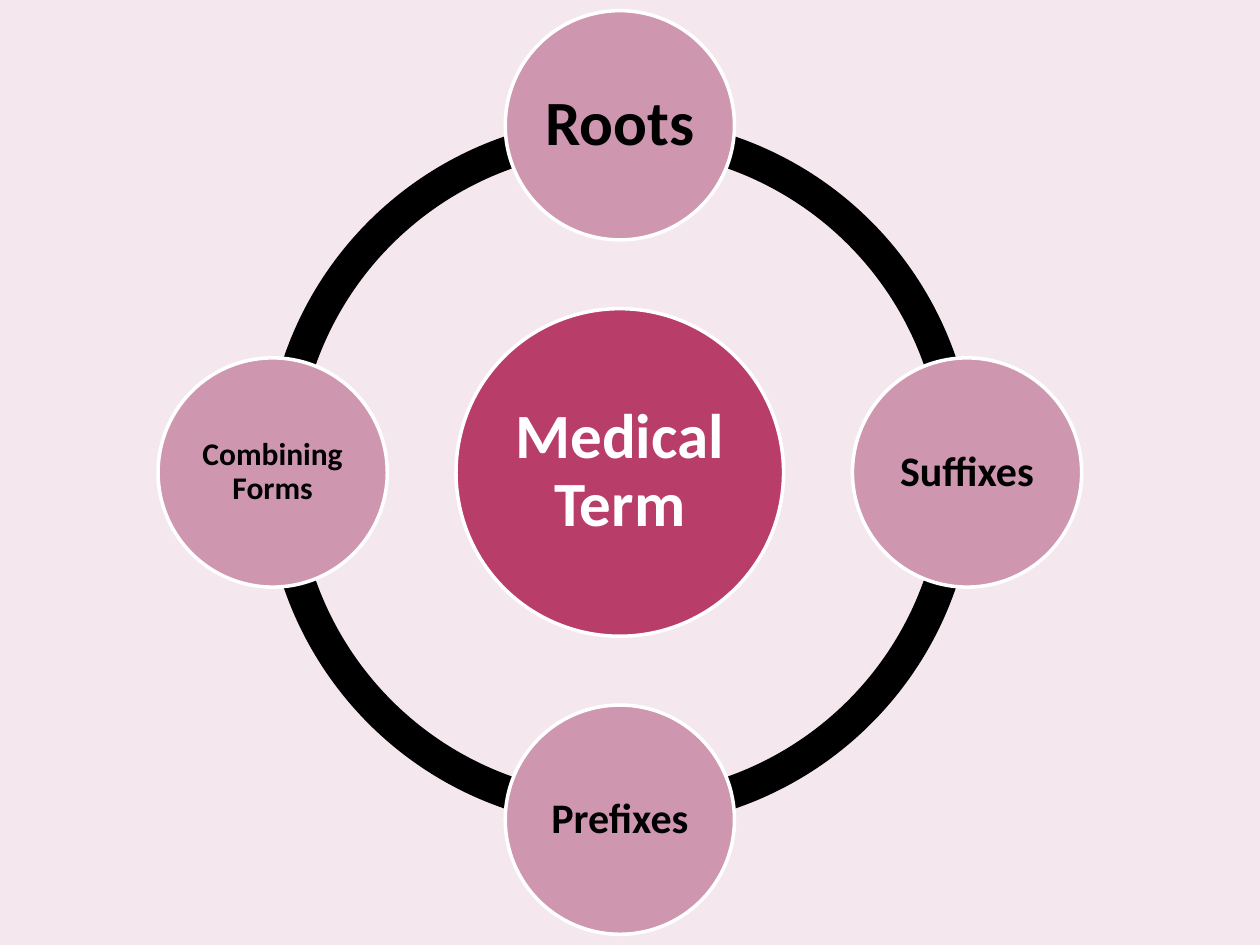
from math import cos, radians, sin

from pptx import Presentation
from pptx.dml.color import RGBColor
from pptx.enum.shapes import MSO_SHAPE
from pptx.enum.text import MSO_ANCHOR, PP_ALIGN
from pptx.util import Pt


def paint(colour_format, colour):
    colour_format.solid()
    colour_format.fore_color.rgb = RGBColor.from_string(colour)


def write(holder, text, size, colour, inset):
    frame = holder.text_frame
    frame.word_wrap = True
    frame.vertical_anchor = MSO_ANCHOR.MIDDLE
    frame.margin_left = frame.margin_right = Pt(inset)
    frame.margin_top = frame.margin_bottom = Pt(inset)
    paragraph = frame.paragraphs[0]
    paragraph.text = text
    paragraph.alignment = PP_ALIGN.CENTER
    paragraph.line_spacing = 0.9
    paragraph.font.name = "Calibri"
    paragraph.font.size = Pt(size)
    paragraph.font.bold = True
    paint(paragraph.font.fill, colour)


prs = Presentation()
prs.slide_width, prs.slide_height = Pt(720), Pt(540)
slide = prs.slides.add_slide(prs.slide_layouts[6])
paint(slide.background.fill, "F4E7ED")

center_x, center_y = 354.2, 270
ring_size, orbit = 406, 198.4
hub_size, part_size = 187.2, 131

for start, end in [(108, 162), (54, 108), (0, 54), (162, 0)]:
    arc = slide.shapes.add_shape(
        MSO_SHAPE.BLOCK_ARC,
        Pt(center_x - ring_size / 2), Pt(center_y - ring_size / 2),
        Pt(ring_size), Pt(ring_size))
    arc.adjustments[0] = start
    arc.adjustments[1] = end
    arc.adjustments[2] = 0.046
    arc.shadow.inherit = False
    paint(arc.fill, "000000")
    arc.line.fill.background()

circles = [("Medical Term", 36, "FFFFFF", "B83D68", hub_size, 0, 0, 3.6)]
parts = [("Roots", 36, 3.6), ("Suffixes", 24, 2.2),
         ("Prefixes", 24, 2.2), ("Combining Forms", 18, 2.2)]
for index, (part, size, inset) in enumerate(parts):
    circles.append((part, size, "000000", "CF96B0", part_size, orbit, index * 90 - 90, inset))

for term, size, ink, fill, diameter, distance, angle, inset in circles:
    x = center_x + distance * cos(radians(angle))
    y = center_y + distance * sin(radians(angle))
    circle = slide.shapes.add_shape(
        MSO_SHAPE.OVAL, Pt(x - diameter / 2), Pt(y - diameter / 2),
        Pt(diameter), Pt(diameter))
    circle.shadow.inherit = False
    paint(circle.fill, fill)
    paint(circle.line.fill, "FFFFFF")
    circle.line.width = Pt(2)
    write(circle, term, size=size, colour=ink, inset=inset)

prs.save("out.pptx")
